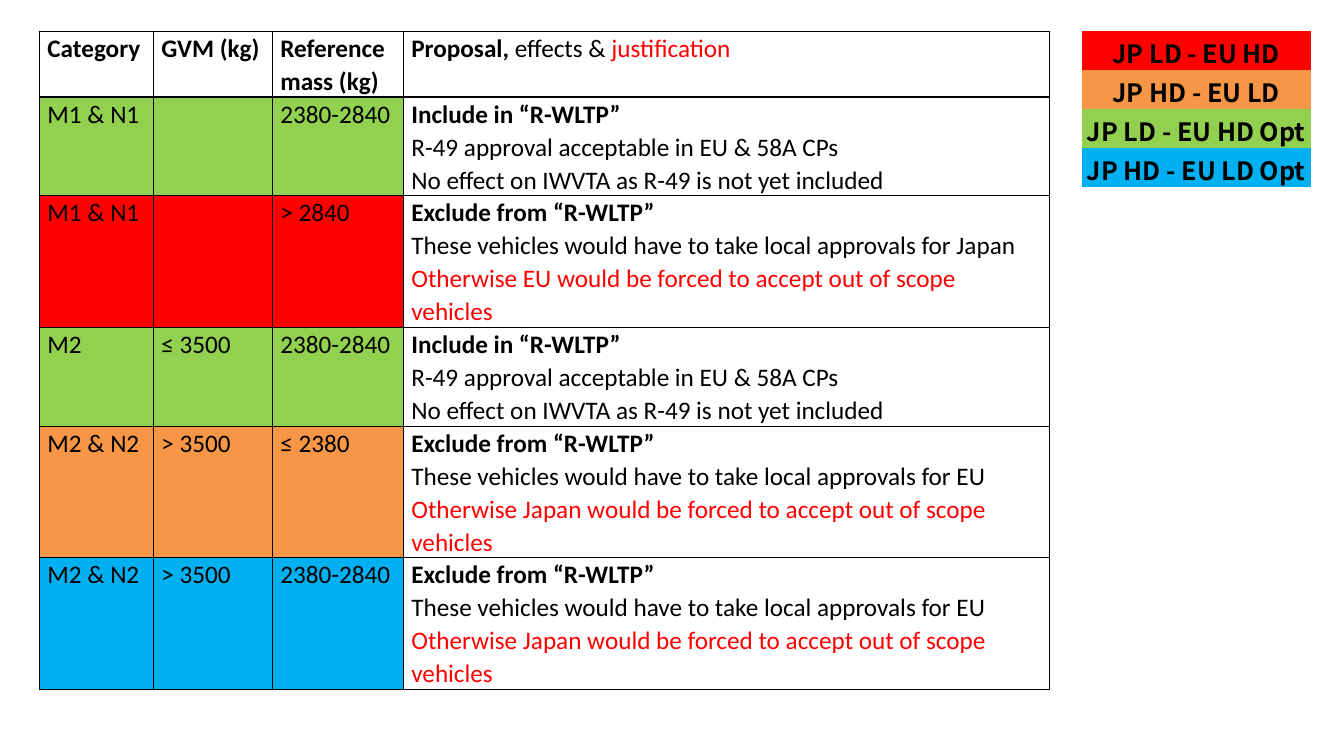
"""Build the slide that sorts vehicle classes by proposal."""
from dataclasses import dataclass

from lxml.etree import SubElement
from pptx import Presentation
from pptx.dml.color import RGBColor
from pptx.enum.text import MSO_ANCHOR, PP_ALIGN
from pptx.oxml.ns import qn
from pptx.util import Inches, Pt

LEFT, CENTER = PP_ALIGN.LEFT, PP_ALIGN.CENTER
TOP, MIDDLE = MSO_ANCHOR.TOP, MSO_ANCHOR.MIDDLE
PLAIN = "{2D5ABB26-0587-4C30-8999-92F81FD0307C}"
BLANK = 6


@dataclass(frozen=True)
class Theme:
    """Colours, fonts and type sizes of the slide."""
    black: str = "000000"
    white: str = "FFFFFF"
    red: str = "FF0000"
    orange: str = "F79646"
    green: str = "92D050"
    blue: str = "00B0F0"
    body: str = "Calibri"
    key: str = "Noto Sans CJK JP"
    size: float = 18
    lead: float = 1.07
    rule: float = 1


THEME = Theme()


@dataclass(frozen=True)
class Style:
    """Look of the cells in one table."""
    font: str
    align: int
    anchor: int
    pad: float
    lined: bool


GRID = Style(THEME.body, LEFT, TOP, 0.08, True)
LEGEND = Style(THEME.key, CENTER, MIDDLE, 0.05, False)


def plain(text):
    """Return one line of regular black text."""
    return [(text, False, THEME.black)]


def bold(text):
    """Return one line of bold black text."""
    return [(text, True, THEME.black)]


def include():
    """Return the lines for a class taken into the rules."""
    return [bold("Include in “R-WLTP”"),
            plain("R-49 approval acceptable in EU & 58A CPs"),
            plain("No effect on IWVTA as R-49 is not yet included")]


def exclude(local, forced):
    """Return the lines for a class left out of the rules."""
    reason = f"Otherwise {forced} would be forced to accept out of scope vehicles"
    return [bold("Exclude from “R-WLTP”"),
            plain(f"These vehicles would have to take local approvals for {local}"),
            [(reason, False, THEME.red)]]


HEAD = [[bold("Category")], [bold("GVM (kg)")],
        [bold("Reference"), bold("mass (kg)")],
        [[("Proposal, ", True, THEME.black),
          ("effects & ", False, THEME.black),
          ("justification", False, THEME.red)]]]

CASES = [
    (THEME.green, "M1 & N1", "", "2380-2840", include()),
    (THEME.red, "M1 & N1", "", "> 2840", exclude("Japan", "EU")),
    (THEME.green, "M2", "≤ 3500", "2380-2840", include()),
    (THEME.orange, "M2 & N2", "> 3500", "≤ 2380", exclude("EU", "Japan")),
    (THEME.blue, "M2 & N2", "> 3500", "2380-2840", exclude("EU", "Japan")),
]

KEYS = [
    (THEME.red, "JP LD - EU HD"),
    (THEME.orange, "JP HD - EU LD"),
    (THEME.green, "JP LD - EU HD Opt"),
    (THEME.blue, "JP HD - EU LD Opt"),
]


def border(cell):
    """Draw a thin black line on each side of a cell."""
    props = cell._tc.get_or_add_tcPr()
    for side in ("lnL", "lnR", "lnT", "lnB"):
        line = SubElement(props, qn(f"a:{side}"), w=str(Pt(THEME.rule)))
        fill = SubElement(line, qn("a:solidFill"))
        SubElement(fill, qn("a:srgbClr"), val=THEME.black)


def fill_cell(cell, lines, color, style):
    """Set the text, fill and lines of one cell."""
    if style.lined:
        border(cell)
    cell.fill.solid()
    cell.fill.fore_color.rgb = RGBColor.from_string(color)
    cell.margin_left = cell.margin_right = Inches(style.pad)
    cell.margin_top = cell.margin_bottom = 0
    cell.vertical_anchor = style.anchor
    frame = cell.text_frame
    for index, line in enumerate(lines):
        para = frame.add_paragraph() if index else frame.paragraphs[0]
        para.alignment = style.align
        para.line_spacing = THEME.lead
        for text, strong, tint in line:
            run = para.add_run()
            run.text = text
            run.font.name = style.font
            run.font.size = Pt(THEME.size)
            run.font.bold = strong
            run.font.color.rgb = RGBColor.from_string(tint)


def add_grid(slide, box, widths, heights, rows, style):
    """Place a table in a box; each row lists lines and fill per cell."""
    frame = slide.shapes.add_table(len(heights), len(widths), *map(Inches, box))
    table = frame.table
    table.first_row = table.horz_banding = False
    table._tbl.tblPr.find(qn("a:tableStyleId")).text = PLAIN
    for column, width in zip(table.columns, widths):
        column.width = Inches(width)
    for row, height, cells in zip(table.rows, heights, rows):
        row.height = Inches(height)
        for cell, (lines, color) in zip(row.cells, cells):
            fill_cell(cell, lines, color, style)


def add_cases(slide, box):
    """Place the table of vehicle classes and proposals."""
    rows = [[(lines, THEME.white) for lines in HEAD]]
    for color, *facts, notes in CASES:
        cells = [([plain(fact)] if fact else [], color) for fact in facts]
        rows.append(cells + [(notes, THEME.white)])
    widths = [1.13, 1.18, 1.3, 6.41]
    heights = [0.64] + [0.96] * len(CASES)
    add_grid(slide, box, widths, heights, rows, GRID)


def add_key(slide, box):
    """Place the colour key."""
    rows = [[([bold(text)], color)] for color, text in KEYS]
    add_grid(slide, box, [box[2]], [0.19] * len(KEYS), rows, LEGEND)


def main():
    """Build and save the deck."""
    deck = Presentation()
    deck.slide_width, deck.slide_height = Inches(13.33), Inches(7.5)
    slide = deck.slides.add_slide(deck.slide_layouts[BLANK])
    add_cases(slide, (0.39, 0.31, 10.02, 6.36))
    add_key(slide, (10.73, 0.31, 2.27, 1.21))
    deck.save("out.pptx")


if __name__ == "__main__":
    main()
